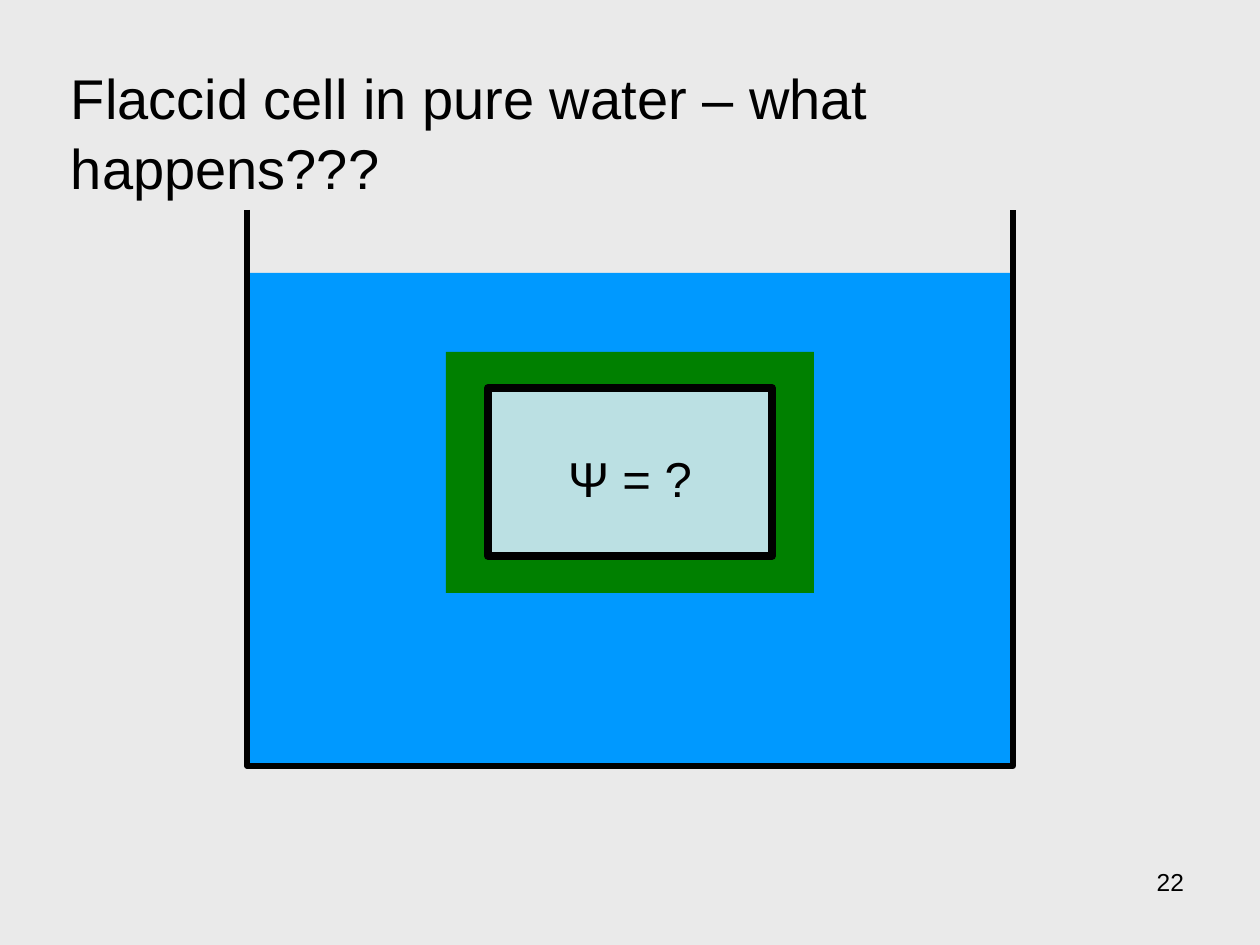
"""Build the slide of a flaccid cell in a tank of pure water."""
from pptx import Presentation
from pptx.dml.color import RGBColor
from pptx.enum.shapes import MSO_SHAPE
from pptx.enum.text import MSO_ANCHOR, MSO_AUTO_SIZE, PP_ALIGN
from pptx.util import Pt

PX = 914400 // 126
WIDE, HIGH = 1260, 945
HEX = {"back": "EAEAEA", "water": "0099FF", "wall": "008000",
       "sap": "BBE0E3", "ink": "000000"}
TITLE = ("Flaccid cell in pure water – what happens???", (58, 55, 1144, 79), 32, PP_ALIGN.LEFT)
LABELS = [
    ("Ψ = ?", (555, 443, 150, 72), 28, PP_ALIGN.CENTER),
    ("22", (903, 861, 294, 66), 14, PP_ALIGN.RIGHT),
]
BLOCKS = [
    ("water", (247, 273, 766, 493), 0),
    ("wall", (446, 352, 368, 241), 0),
    ("sap", (488, 388, 284, 168), 4.5),
]
TANK = [(247, 210), (247, 766), (1013, 766), (1013, 210)]
FRAME = {"word_wrap": True, "auto_size": MSO_AUTO_SIZE.NONE,
         "vertical_anchor": MSO_ANCHOR.TOP, "margin_left": 13 * PX,
         "margin_right": 13 * PX, "margin_top": 6 * PX, "margin_bottom": 6 * PX}


def color(name):
    return RGBColor.from_string(HEX[name])


def assign(item, values):
    for key, value in values.items():
        setattr(item, key, value)


def place(shape, box):
    assign(shape, dict(zip(("left", "top", "width", "height"), (n * PX for n in box))))


def write(shape, text, box, size, align):
    place(shape, box)
    frame = shape.text_frame
    assign(frame, FRAME)
    frame.text = text
    para = frame.paragraphs[0]
    para.alignment = align
    assign(para.runs[0].font, {"name": "Arial", "size": Pt(size)})
    para.runs[0].font.color.rgb = color("ink")


def stroke(shape, width):
    shape.shadow.inherit = False
    if width:
        shape.line.color.rgb = color("ink")
        shape.line.width = Pt(width)
    else:
        shape.line.fill.background()


def main():
    deck = Presentation()
    assign(deck, {"slide_width": WIDE * PX, "slide_height": HIGH * PX})
    slide = deck.slides.add_slide(deck.slide_layouts[5])
    slide.background.fill.solid()
    slide.background.fill.fore_color.rgb = color("back")
    shapes = slide.shapes

    head = shapes.title
    write(head, *TITLE)
    head.text_frame.margin_right = 40 * PX
    head.text_frame.paragraphs[0].line_spacing = 1.04

    for name, box, width in BLOCKS:
        block = shapes.add_shape(MSO_SHAPE.RECTANGLE, 0, 0, 0, 0)
        place(block, box)
        block.fill.solid()
        block.fill.fore_color.rgb = color(name)
        stroke(block, width)

    pen = shapes.build_freeform(*TANK[0], scale=PX)
    pen.add_line_segments(TANK[1:], close=False)
    tank = pen.convert_to_shape()
    tank.fill.background()
    stroke(tank, 3)

    for label in LABELS:
        write(shapes.add_textbox(0, 0, 0, 0), *label)
    deck.save("out.pptx")


if __name__ == "__main__":
    main()
